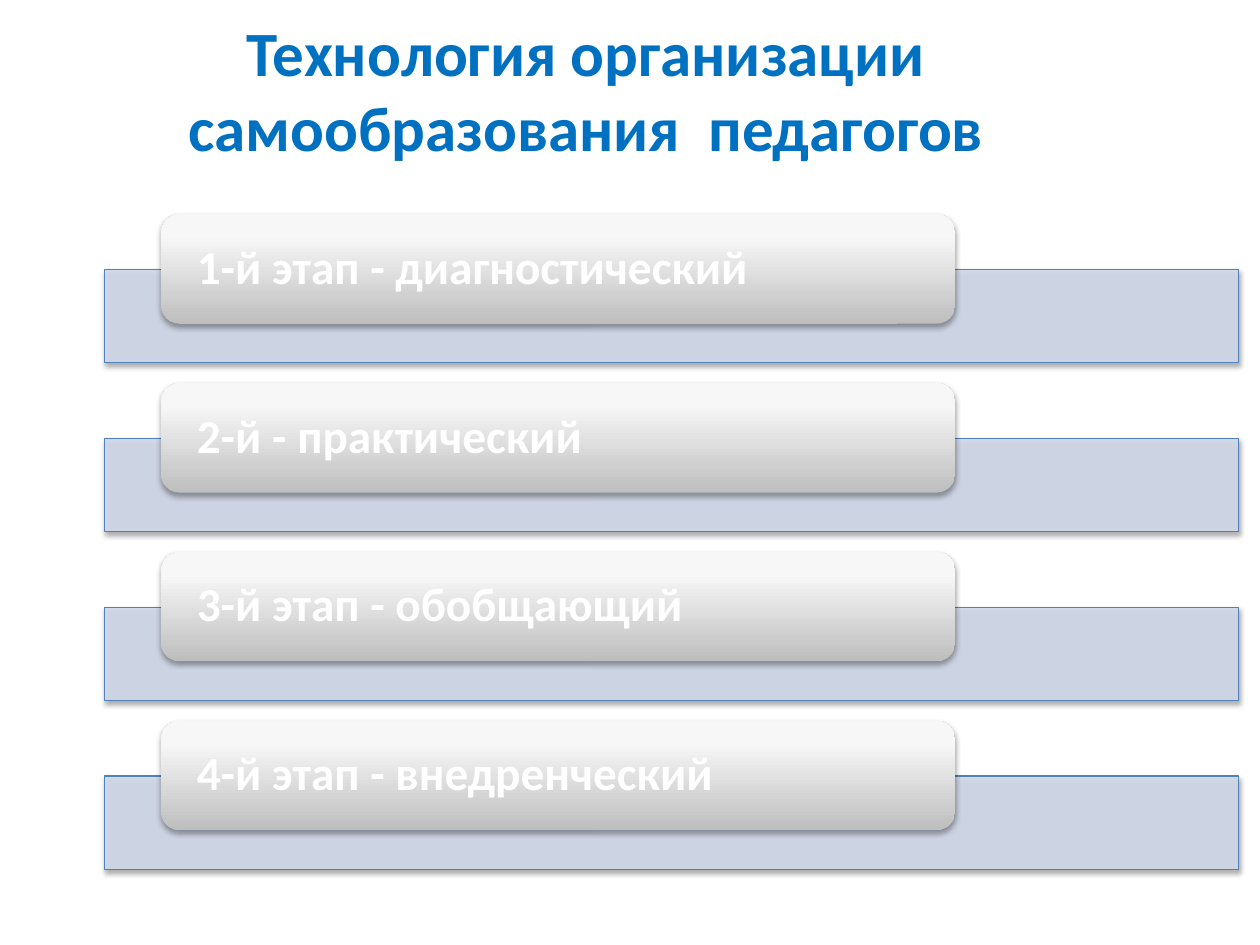
from copy import deepcopy

from lxml import etree
from pptx import Presentation
from pptx.dml.color import RGBColor
from pptx.enum.shapes import MSO_SHAPE
from pptx.enum.text import MSO_ANCHOR, PP_ALIGN
from pptx.oxml.ns import qn
from pptx.util import Inches, Pt

RECTANGLE, ROUNDED = MSO_SHAPE.RECTANGLE, MSO_SHAPE.ROUNDED_RECTANGLE
MIDDLE = MSO_ANCHOR.MIDDLE
LEFT, CENTER = PP_ALIGN.LEFT, PP_ALIGN.CENTER

COLORS = {
    "title": "0070C0",
    "bar": "D0D8E8",
    "bar_line": "4F81BD",
    "label": "FFFFFF",
    "shadow": "000000",
}
LABEL_GRADIENT = [(0, "BEBEBE"), (0.8, "F7F7F7"), (1, "F8F8F8")]
STAGES = [
    "1-й этап - диагностический",
    "2-й - практический",
    "3-й этап - обобщающий",
    "4-й этап - внедренческий",
]
FIRST_TOP, STAGE_STEP, BAR_OFFSET = 1.7, 1.34, 0.44


class StageSlide:
    """Holds the slide and its style, and draws each kind of element."""

    font_name = "Calibri"

    def __init__(self, slide):
        self.slide = slide

    def add_shape(self, preset, left, top, width, height):
        shape = self.slide.shapes.add_shape(
            preset, Inches(left), Inches(top), Inches(width), Inches(height))
        self.add_shadow(shape)
        return shape

    def add_shadow(self, shape):
        shape.shadow.inherit = False
        effects = shape._element.spPr.find(qn("a:effectLst"))
        shadow = etree.SubElement(
            effects, qn("a:outerShdw"), blurRad=str(Pt(3.1)),
            dist=str(Pt(1.8)), dir="5400000", rotWithShape="0")
        color = etree.SubElement(shadow, qn("a:srgbClr"), val=COLORS["shadow"])
        etree.SubElement(color, qn("a:alpha"), val="35000")

    def set_text(self, shape, text, size, color, alignment):
        frame = shape.text_frame
        frame.word_wrap = True
        frame.vertical_anchor = MIDDLE
        paragraph = frame.paragraphs[0]
        paragraph.text = text
        paragraph.alignment = alignment
        font = paragraph.font
        font.name = self.font_name
        font.size = Pt(size)
        font.bold = True
        font.color.rgb = RGBColor.from_string(COLORS[color])
        return frame

    def add_title(self, text):
        box = self.slide.shapes.add_textbox(0, 0, Inches(9.3), Inches(1.41))
        self.set_text(box, text, 36, "title", CENTER)

    def add_bar(self, top):
        bar = self.add_shape(RECTANGLE, 0.83, top, 9, 0.74)
        bar.fill.solid()
        bar.fill.fore_color.rgb = RGBColor.from_string(COLORS["bar"])
        color = bar._element.spPr.find(qn("a:solidFill"))[0]
        etree.SubElement(color, qn("a:alpha"), val="90000")
        bar.line.color.rgb = RGBColor.from_string(COLORS["bar_line"])
        bar.line.width = Pt(0.75)

    def add_label(self, text, top):
        label = self.add_shape(ROUNDED, 1.28, top, 6.3, 0.87)
        label.line.fill.background()
        label.fill.gradient()
        label.fill.gradient_angle = 90
        stops = label._element.spPr.find(".//" + qn("a:gsLst"))
        stops.append(deepcopy(stops[-1]))
        for stop, (position, color) in zip(label.fill.gradient_stops, LABEL_GRADIENT):
            stop.position = position
            stop.color.rgb = RGBColor.from_string(color)
        frame = self.set_text(label, text, 27, "label", LEFT)
        frame.margin_left = frame.margin_right = Inches(0.24)
        frame.margin_top = frame.margin_bottom = 0
        frame.paragraphs[0].line_spacing = 0.9


def main():
    presentation = Presentation()
    presentation.slide_width = Inches(10)
    presentation.slide_height = Inches(7.5)
    page = StageSlide(presentation.slides.add_slide(presentation.slide_layouts[6]))
    page.add_title("Технология организации самообразования  педагогов")
    for index, stage in enumerate(STAGES):
        top = FIRST_TOP + index * STAGE_STEP
        page.add_bar(top + BAR_OFFSET)
        page.add_label(stage, top)
    presentation.save("out.pptx")


if __name__ == "__main__":
    main()
